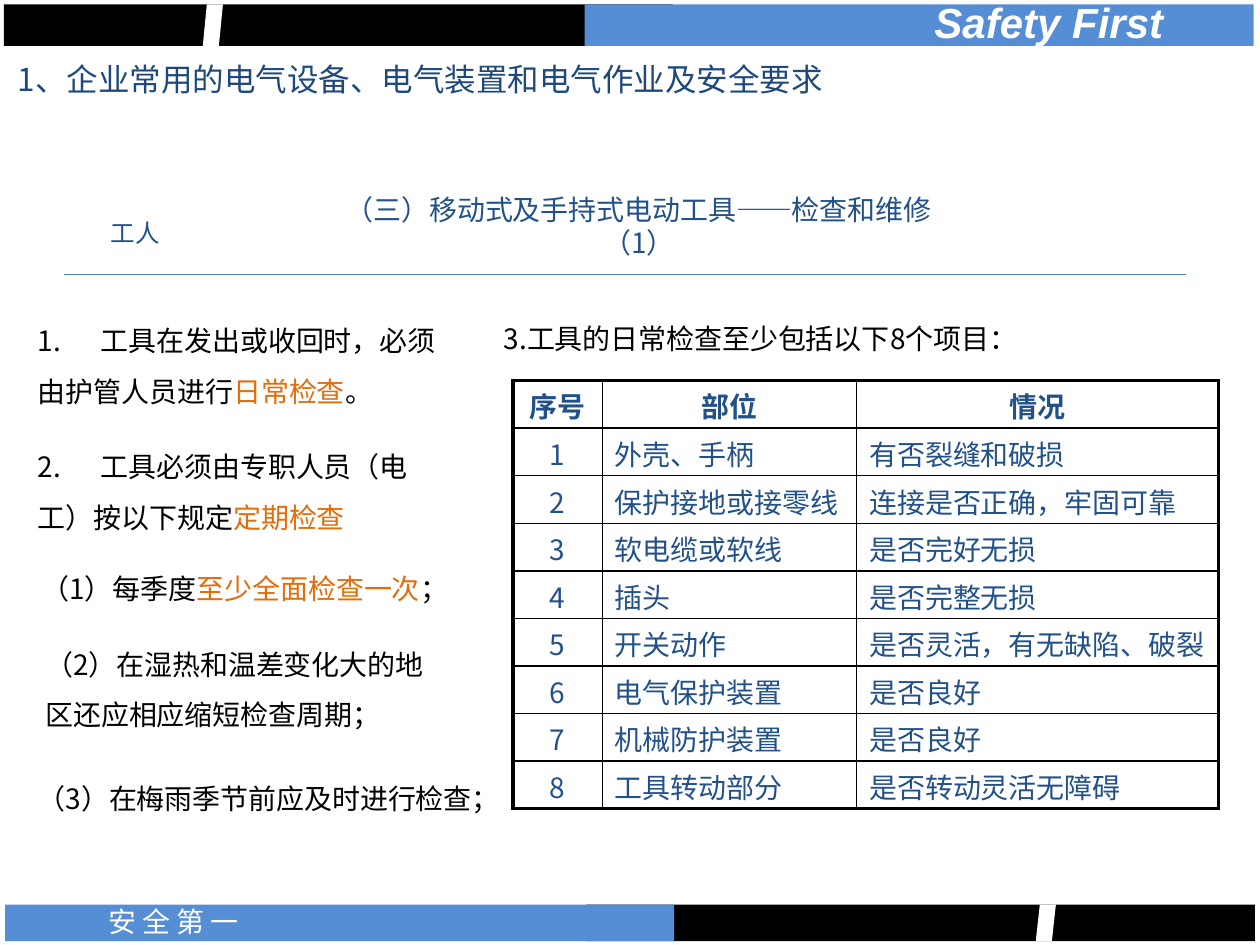
import dataclasses

import lxml.etree
import pptx
import pptx.dml.color
import pptx.enum.shapes
import pptx.enum.text
import pptx.oxml.ns
import pptx.util

Inches = pptx.util.Inches
Pt = pptx.util.Pt
qn = pptx.oxml.ns.qn
SHAPE = pptx.enum.shapes.MSO_SHAPE
ALIGN = pptx.enum.text.PP_ALIGN
ANCHOR = pptx.enum.text.MSO_ANCHOR


@dataclasses.dataclass(frozen=True)
class Theme:
    font: str = "Noto Sans CJK SC"
    brand: str = "Arial"
    black: str = "000000"
    white: str = "FFFFFF"
    band: str = "558ED5"
    title: str = "1F497D"
    blue: str = "22518A"
    accent: str = "E46C0A"
    rule: str = "4B7EBC"
    motto: int = 24
    head: int = 18
    text: int = 16
    small: int = 14
    thick: float = 2.25
    thin: float = 1


THEME = Theme()

# Each item: left indent, right indent (inches), space before (points), runs
ITEMS = [
    (0, 0.36, 0, [("1.\t工具在发出或收回时，必须由护管人员进行", False),
                  ("日常检查", True), ("。", False)]),
    (0, 0.51, 14, [("2.\t工具必须由专职人员（电工）按以下规定", False),
                   ("定期检查", True)]),
    (0.03, 0.35, 12, [("（1）每季度", False), ("至少全面检查一次", True), ("；", False)]),
    (0.06, 0.45, 14, [("（2）在湿热和温差变化大的地区还应相应缩短检查周期；", False)]),
    (0, 0, 19, [("（3）在梅雨季节前应及时进行检查；", False)]),
]

HEADS = ("序号", "部位", "情况")
CHECKS = [
    ("外壳、手柄", "有否裂缝和破损"),
    ("保护接地或接零线", "连接是否正确，牢固可靠"),
    ("软电缆或软线", "是否完好无损"),
    ("插头", "是否完整无损"),
    ("开关动作", "是否灵活，有无缺陷、破裂"),
    ("电气保护装置", "是否良好"),
    ("机械防护装置", "是否良好"),
    ("工具转动部分", "是否转动灵活无障碍"),
]


def rgb(code):
    return pptx.dml.color.RGBColor.from_string(code)


def style(run, size, color, bold=False, face=THEME.font):
    font = run.font
    font.name, font.size, font.bold = face, Pt(size), bold
    font.color.rgb = rgb(color)
    lxml.etree.SubElement(run._r.get_or_add_rPr(), qn("a:ea")).set("typeface", face)


def place(shape, left, top, width, height):
    shape.left, shape.top = Inches(left), Inches(top)
    shape.width, shape.height = Inches(width), Inches(height)


def fill(frame, text, size, color, align=ALIGN.LEFT, pitch=None, **look):
    """Write one paragraph; pitch is the line height in points."""
    frame.word_wrap = True
    frame.auto_size = pptx.enum.text.MSO_AUTO_SIZE.NONE
    frame.vertical_anchor = ANCHOR.TOP
    frame.text = text
    para = frame.paragraphs[0]
    para.alignment = align
    if pitch:
        para.line_spacing = Pt(pitch)
    style(para.runs[0], size, color, **look)
    return para


def label(slide, box, *args, **look):
    frame = slide.shapes.add_textbox(*map(Inches, box)).text_frame
    fill(frame, *args, **look)
    return frame


def band(slide, box, parts, turn=0):
    """Draw a strip of parts: kind, offset from the left, width, colour."""
    left, top, height = box
    for kind, shift, width, color in parts:
        part = slide.shapes.add_shape(
            kind, Inches(left + shift), Inches(top), Inches(width), Inches(height))
        part.shadow.inherit = False
        part.fill.solid()
        part.fill.fore_color.rgb = rgb(color)
        part.line.fill.background()
        part.rotation = turn


def frame_bands(slide):
    rect, slash = SHAPE.RECTANGLE, SHAPE.FLOWCHART_DATA
    band(slide, (0.03, 0.035, 0.33), [
        (rect, 0, 5.31, THEME.black), (rect, 4.61, 5.31, THEME.band),
        (slash, 1.58, 0.16, THEME.white)])
    band(slide, (0.04, 7.18, 0.29), [
        (rect, 4.61, 5.31, THEME.black), (rect, 0, 5.31, THEME.band),
        (slash, 8.18, 0.16, THEME.white)], turn=180)
    motto = label(slide, (6.24, -0.08, 3.09, 0.51), "Safety First", THEME.motto,
                  THEME.white, ALIGN.RIGHT, bold=True, face=THEME.brand)
    motto.paragraphs[0].runs[0].font.italic = True
    label(slide, (0.76, 7.13, 1.32, 0.37), "安 全 第 一", THEME.text, THEME.white, pitch=19)


def heading(slide):
    title = slide.shapes.title
    place(title, 0.04, 0.45, 6.69, 0.37)
    fill(title.text_frame, "1、企业常用的电气设备、电气装置和电气作业及安全要求",
         THEME.head, THEME.title, pitch=20)
    label(slide, (0.78, 1.68, 0.7, 0.34), "工人", THEME.small, THEME.blue, pitch=17)
    topic = label(slide, (2.32, 1.48, 5.5, 0.63),
                  "（三）移动式及手持式电动工具——检查和维修（1）",
                  THEME.text, THEME.blue, ALIGN.CENTER, pitch=19)
    topic.margin_left = topic.margin_right = Inches(0.3)
    line = slide.shapes.add_connector(
        pptx.enum.shapes.MSO_CONNECTOR.STRAIGHT,
        Inches(0.51), Inches(2.18), Inches(9.41), Inches(2.18))
    line.line.color.rgb = rgb(THEME.rule)
    line.line.width = Pt(0.75)
    lxml.etree.SubElement(line._element.spPr, qn("a:effectLst"))


def rules(slide, box):
    body = slide.placeholders[1]
    place(body, *box)
    frame = body.text_frame
    frame.word_wrap = True
    frame.auto_size = pptx.enum.text.MSO_AUTO_SIZE.NONE
    for i, (left, right, gap, runs) in enumerate(ITEMS):
        para = frame.paragraphs[0] if i == 0 else frame.add_paragraph()
        para.line_spacing, para.space_before = Pt(29), Pt(gap)
        props = para._p.get_or_add_pPr()
        for key, value in (("marL", left), ("marR", right), ("indent", 0)):
            props.set(key, str(Inches(value)))
        lxml.etree.SubElement(props, qn("a:buNone"))
        tabs = lxml.etree.SubElement(props, qn("a:tabLst"))
        lxml.etree.SubElement(tabs, qn("a:tab"), pos=str(Inches(0.38)), algn="l")
        for text, strong in runs:
            run = para.add_run()
            run.text = text
            style(run, THEME.text, THEME.accent if strong else THEME.black)


def border(cell, widths):
    props = cell._tc.get_or_add_tcPr()
    for i, (side, width) in enumerate(zip("LRTB", widths)):
        line = lxml.etree.Element(qn("a:ln" + side), w=str(Pt(width)))
        paint = lxml.etree.SubElement(line, qn("a:solidFill"))
        lxml.etree.SubElement(paint, qn("a:srgbClr"), val=THEME.black)
        props.insert(i, line)


def checks(slide, box):
    rows = [HEADS] + [(str(i), *row) for i, row in enumerate(CHECKS, 1)]
    table = slide.shapes.add_table(len(rows), len(HEADS), *map(Inches, box)).table
    table.first_row = table.horz_banding = False
    for col, width in zip(table.columns, (0.71, 2.02, 2.87)):
        col.width = Inches(width)
    for r, row in enumerate(rows):
        table.rows[r].height = Inches(box[3] / len(rows))
        for c, text in enumerate(row):
            cell = table.cell(r, c)
            align = ALIGN.CENTER if r == 0 or c == 0 else ALIGN.LEFT
            fill(cell.text_frame, text, THEME.text, THEME.blue, align, 19, bold=r == 0)
            cell.vertical_anchor = ANCHOR.MIDDLE
            cell.margin_top, cell.margin_bottom = Inches(0.09), Inches(0.01)
            cell.fill.background()
            outer = (c == 0, c == len(row) - 1, r == 0, r == len(rows) - 1)
            border(cell, [THEME.thick if edge else THEME.thin for edge in outer])


def main():
    deck = pptx.Presentation()
    deck.slide_width, deck.slide_height = Inches(10), Inches(7.5)
    slide = deck.slides.add_slide(deck.slide_layouts[1])
    frame_bands(slide)
    heading(slide)
    rules(slide, (0.2, 2.38, 3.9, 4.14))
    label(slide, (3.9, 2.37, 4.45, 0.5), "3.工具的日常检查至少包括以下8个项目：",
          THEME.text, THEME.black, pitch=29)
    checks(slide, (4.07, 3.02, 5.6, 3.4))
    deck.save("out.pptx")


if __name__ == "__main__":
    main()
